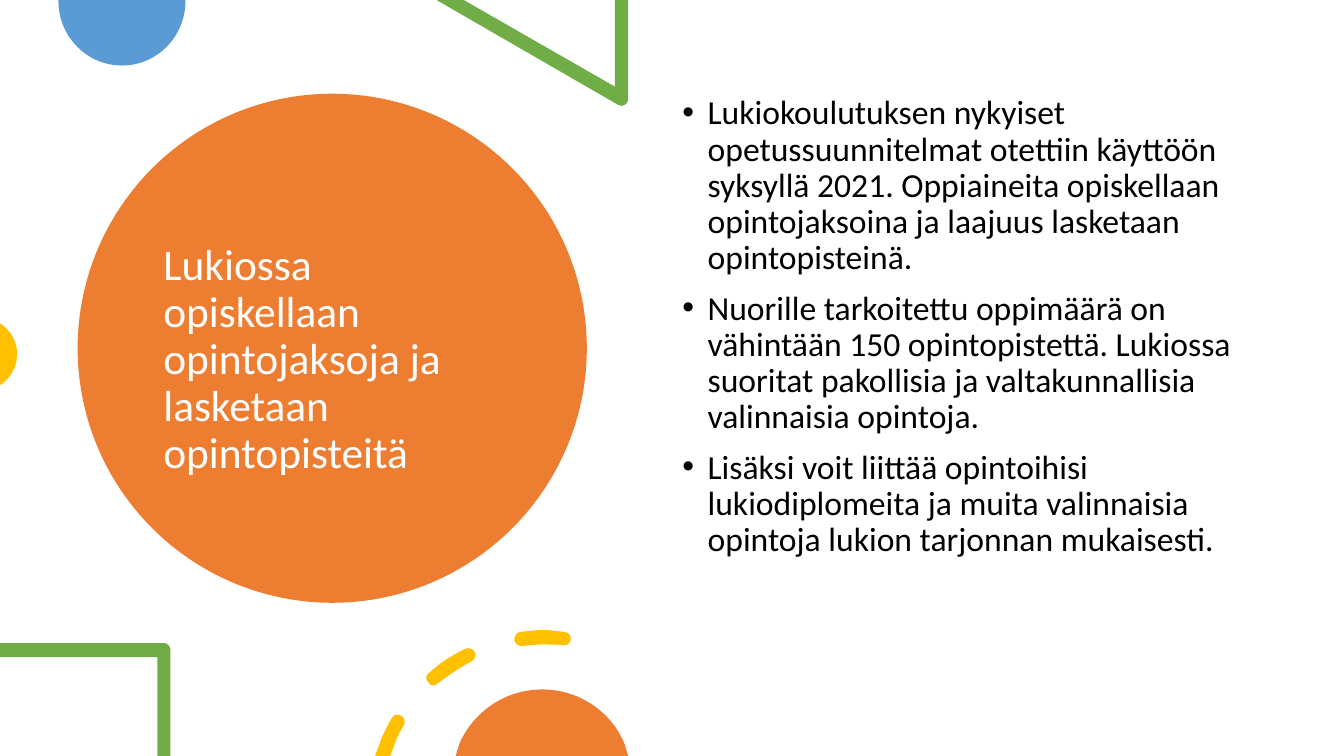
"""Build a slide on upper secondary studies with a round title and loose shapes."""
from lxml import etree
from pptx import Presentation
from pptx.dml.color import RGBColor
from pptx.enum.shapes import MSO_SHAPE
from pptx.enum.text import MSO_ANCHOR, PP_ALIGN
from pptx.oxml.ns import qn
from pptx.util import Emu, Pt

OVAL = MSO_SHAPE.OVAL
LEFT = PP_ALIGN.LEFT
MIDDLE, TOP = MSO_ANCHOR.MIDDLE, MSO_ANCHOR.TOP
ORANGE, BLUE, GREEN, YELLOW = "ED7D31", "5B9BD5", "70AD47", "FFC000"
WHITE, BLACK = "FFFFFF", "000000"
COLS, ROWS = 1333, 750
CELL = 9144
INDENT = 25 * CELL


def paint(shape, color):
    shape.fill.solid()
    shape.fill.fore_color.rgb = RGBColor.from_string(color)
    shape.line.fill.background()
    shape.shadow.inherit = False


def write(box, *lines, size, color, anchor, before=0, bullet=None):
    frame = box.text_frame
    frame.word_wrap = True
    frame.vertical_anchor = anchor
    frame.text = "\n".join(lines)
    for para in frame.paragraphs:
        para.alignment = LEFT
        para.line_spacing = 0.9
        para.space_before = Pt(before)
        font = para.runs[0].font
        font.name, font.size = "Calibri", Pt(size)
        font.color.rgb = RGBColor.from_string(color)
        if bullet:
            props = para._p.get_or_add_pPr()
            props.set("marL", str(INDENT))
            props.set("indent", str(-INDENT))
            face = etree.SubElement(props, qn("a:buFont"))
            face.set("typeface", "Arial")
            mark = etree.SubElement(props, qn("a:buChar"))
            mark.set("char", bullet)


deck = Presentation()
deck.slide_width, deck.slide_height = Emu(COLS * CELL), Emu(ROWS * CELL)
slide = deck.slides.add_slide(deck.slide_layouts[5])
shapes = slide.shapes

disc = shapes.add_shape(OVAL, 77 * CELL, 93 * CELL, 505 * CELL, 505 * CELL)
paint(disc, ORANGE)

title = shapes.title
title.left, title.top = Emu(152 * CELL), Emu(135 * CELL)
title.width, title.height = Emu(354 * CELL), Emu(445 * CELL)
title.element.getparent().append(title.element)
write(title, "Lukiossa opiskellaan opintojaksoja ja lasketaan opintopisteitä",
      size=31, color=WHITE, anchor=MIDDLE)

dot = [(184, 0), (58, 0), (58, 1), (58, 36, 86, 65, 121, 65),
       (156, 65, 184, 36, 184, 1)]
wedge = [(623, 0), (610, 0), (610, 86), (460, 0), (433, 0), (613, 104),
         (614, 105, 615, 105, 616, 105), (620, 105, 623, 102, 623, 98)]
edge = [(0, 321), (0, 382), (2, 381), (11, 374, 17, 364, 17, 351),
        (17, 339, 11, 329, 2, 322)]
frame = [(163, 638), (0, 638), (0, 652), (156, 652), (156, ROWS), (169, ROWS),
         (169, 645), (169, 641, 166, 638, 163, 638)]
low = [(395, 709), (393, 708, 390, 710, 389, 712),
       (385, 718, 382, 725, 379, 731), (372, ROWS), (387, ROWS), (392, 737),
       (394, 731, 397, 725, 401, 719), (402, 716, 401, 711, 398, 710),
       (397, 709, 396, 709, 395, 709)]
mid = [(464, 643), (463, 643, 462, 643, 461, 644),
       (448, 650, 436, 658, 425, 668), (422, 670, 422, 675, 425, 677),
       (426, 679, 428, 680, 430, 680), (432, 680, 433, 679, 434, 678),
       (445, 670, 456, 662, 468, 656), (471, 654, 472, 650, 471, 647),
       (469, 644, 467, 643, 464, 643)]
high = [(538, 625), (531, 625, 524, 626, 516, 627),
        (513, 627, 510, 631, 510, 635), (511, 638, 514, 641, 517, 641),
        (532, 639, 545, 639, 558, 640), (562, 641, 565, 638, 566, 635),
        (567, 631, 564, 627, 560, 627), (553, 626, 545, 625, 538, 625)]
hill = [(538, 684), (501, 684, 470, 706, 456, 737), (452, ROWS), (623, ROWS),
        (619, 737), (606, 706, 574, 684, 538, 684)]

for color, loops in ((BLUE, [dot]), (GREEN, [wedge]), (YELLOW, [edge]),
                     (GREEN, [frame]), (YELLOW, [low, mid, high]),
                     (ORANGE, [hill])):
    pen = shapes.build_freeform(*loops[0][0], scale=CELL)
    for loop in loops:
        if loop is not loops[0]:
            pen.move_to(*loop[0])
        pen.add_line_segments([step[-2:] for step in loop[1:]], close=True)
    form = pen.convert_to_shape()
    paint(form, color)
    left, top = round(form.left / CELL), round(form.top / CELL)
    steps = [step for loop in loops for step in loop[1:]]
    sides = list(form.element.iter(qn("a:lnTo")))
    for side, (*bend, endx, endy) in zip(sides, steps):
        if bend:
            side.tag = qn("a:cubicBezTo")
            for spot, (x, y) in enumerate((bend[:2], bend[2:])):
                knot = etree.Element(qn("a:pt"))
                knot.set("x", str(x - left))
                knot.set("y", str(y - top))
                side.insert(spot, knot)

body = shapes.add_textbox(667 * CELL, 90 * CELL, 575 * CELL, 535 * CELL)
write(body,
      "Lukiokoulutuksen nykyiset opetussuunnitelmat otettiin käyttöön syksyllä "
      "2021. Oppiaineita opiskellaan opintojaksoina ja laajuus lasketaan "
      "opintopisteinä.",
      "Nuorille tarkoitettu oppimäärä on vähintään 150 opintopistettä. Lukiossa "
      "suoritat pakollisia ja valtakunnallisia valinnaisia opintoja.",
      "Lisäksi voit liittää opintoihisi lukiodiplomeita ja muita valinnaisia "
      "opintoja lukion tarjonnan mukaisesti.",
      size=24, color=BLACK, anchor=TOP, before=10, bullet="•")

deck.save("out.pptx")
